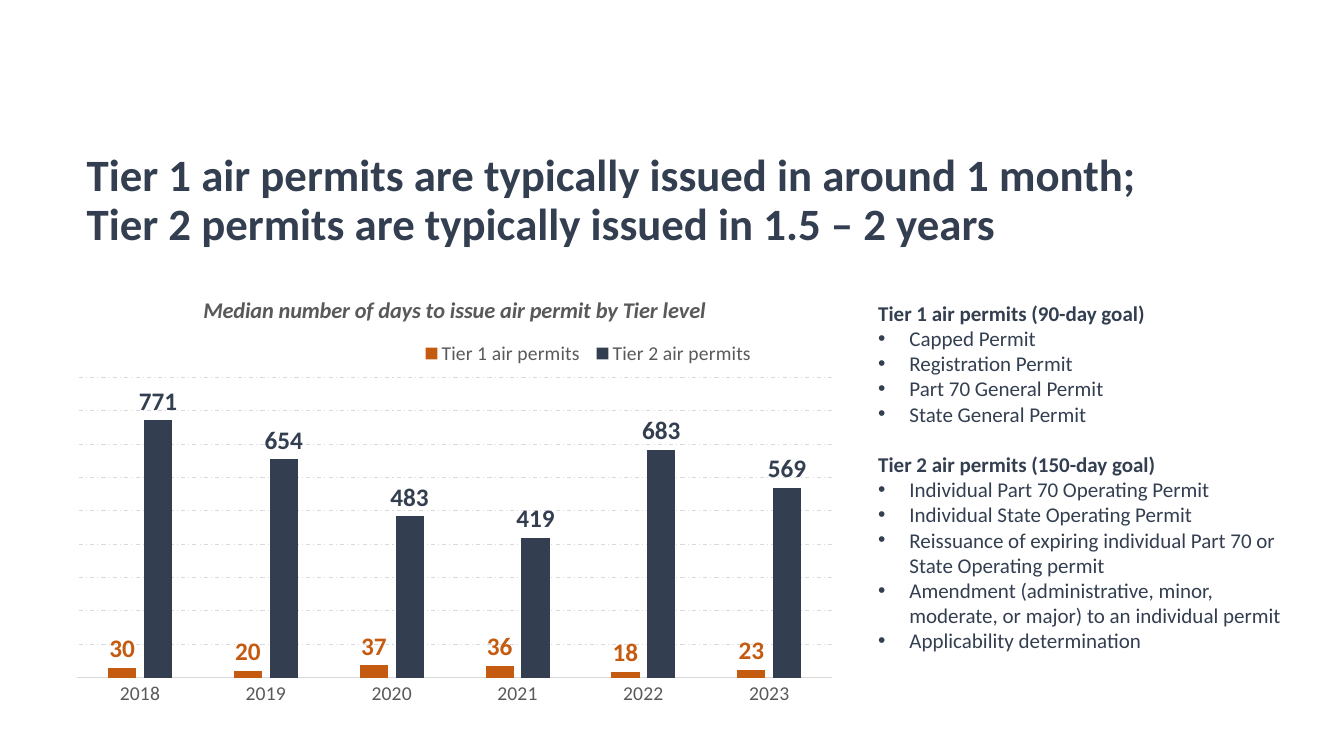
from lxml import etree
from pptx import Presentation
from pptx.chart.data import CategoryChartData
from pptx.dml.color import RGBColor
from pptx.enum.chart import XL_CHART_TYPE as CT, XL_LABEL_POSITION as LP
from pptx.enum.chart import XL_LEGEND_POSITION as LegendPos, XL_TICK_LABEL_POSITION as TickPos, XL_TICK_MARK as Tick
from pptx.enum.dml import MSO_LINE
from pptx.enum.text import MSO_ANCHOR, MSO_AUTO_SIZE, PP_ALIGN
from pptx.oxml import parse_xml
from pptx.oxml.ns import nsdecls, qn
from pptx.util import Inches, Pt

# Content
FONT, NAVY, ORANGE, GRAY, LIGHT = "Calibri", "333F50", "C55A11", "595959", "D9D9D9"
TITLE = ("Tier 1 air permits are typically issued in around 1 month;\v"
         "Tier 2 permits are typically issued in 1.5 – 2 years")
CHART_TITLE = "Median number of days to issue air permit by Tier level"
YEARS = ["2018", "2019", "2020", "2021", "2022", "2023"]
SERIES = [
    ("Tier 1 air permits", [30, 20, 37, 36, 18, 23], ORANGE),
    ("Tier 2 air permits", [771, 654, 483, 419, 683, 569], NAVY),
]
TIERS = [
    ("Tier 1 air permits (90-day goal)", [
        "Capped Permit",
        "Registration Permit",
        "Part 70 General Permit",
        "State General Permit",
    ]),
    ("Tier 2 air permits (150-day goal)", [
        "Individual Part 70 Operating Permit",
        "Individual State Operating Permit",
        "Reissuance of expiring individual Part 70 or State Operating permit",
        "Amendment (administrative, minor, moderate, or major) to an individual permit",
        "Applicability determination",
    ]),
]


def rgb(color):
    return RGBColor.from_string(color)


def set_font(font, size, color, bold=False, italic=False):
    font.name, font.size, font.bold, font.italic = FONT, Pt(size), bold, italic
    font.color.rgb = rgb(color)


def write(tf, text, size, color=NAVY, bold=False, italic=False, bullet=None,
          before=0, line=1.0, align=PP_ALIGN.LEFT):
    """Fill the first paragraph of a frame, or add one after it."""
    p = tf.paragraphs[0]
    if p.text:
        p = tf.add_paragraph()
    indent = Inches(0.31) if bullet else 0
    pPr = p._p.get_or_add_pPr()
    pPr.set("marL", str(indent))
    pPr.set("indent", str(-indent))
    mark = etree.SubElement(pPr, qn("a:buChar" if bullet else "a:buNone"))
    if bullet:
        mark.set("char", bullet)
    p.text = text
    p.alignment, p.line_spacing, p.space_before = align, line, Pt(before)
    p.space_after = Pt(0)
    for r in p.runs:
        set_font(r.font, size, color, bold, italic)


def place(sp, left, top, width, height):
    sp.left, sp.top, sp.width, sp.height = map(Inches, (left, top, width, height))


def set_layout(element, x, y, w=None, h=None, inner=False):
    """Fix a chart part at fractions of the chart area."""
    for old in element.findall(qn("c:layout")):
        element.remove(old)
    parts = [("layoutTarget", "inner")] if inner else []
    parts += [("xMode", "edge"), ("yMode", "edge"), ("x", x), ("y", y)]
    parts += [("w", w), ("h", h)] if w else []
    body = "".join(f'<c:{tag} val="{val}"/>' for tag, val in parts)
    layout = parse_xml(f'<c:layout {nsdecls("c")}><c:manualLayout>{body}'
                       '</c:manualLayout></c:layout>')
    element.insert(0 if inner else 1, layout)


prs = Presentation()
prs.slide_width, prs.slide_height = Inches(13.33), Inches(7.5)
slide = prs.slides.add_slide(prs.slide_layouts[1])

# Title
title = slide.shapes.title
place(title, 0.76, 1.46, 11.45, 1.08)
title.text_frame.vertical_anchor = MSO_ANCHOR.MIDDLE
title.text_frame.auto_size = MSO_AUTO_SIZE.NONE
write(title.text_frame, TITLE, 32, bold=True, line=0.9)

# Permit lists
body = slide.placeholders[1]
place(body, 8.61, 2.93, 4.28, 3.89)
tf = body.text_frame
tf.auto_size = MSO_AUTO_SIZE.NONE
for i, (heading, permits) in enumerate(TIERS):
    write(tf, heading, 15, bold=True, before=18 if i else 0)
    for permit in permits:
        write(tf, permit, 15, bullet="•")

# Chart
data = CategoryChartData()
data.categories = YEARS
for name, days, _ in SERIES:
    data.add_series(name, days)
chart = slide.shapes.add_chart(CT.COLUMN_CLUSTERED, Inches(0.61), Inches(2.75),
                               Inches(7.8), Inches(4.32), data).chart
set_font(chart.font, 14, GRAY)
chart.has_title = True
write(chart.chart_title.text_frame, CHART_TITLE, 16, GRAY, bold=True, italic=True,
      align=PP_ALIGN.CENTER)

# Legend and plot area
chart.has_legend = True
legend = chart.legend
legend.position, legend.include_in_layout = LegendPos.TOP, False
set_font(legend.font, 14, GRAY)
set_layout(legend._element, 0.45, 0.14, 0.44, 0.07)
set_layout(chart._chartSpace.chart.plotArea, 0.02, 0.23, 0.96, 0.69, inner=True)

# Axes
years = chart.category_axis
years.major_tick_mark = Tick.NONE
set_font(years.tick_labels.font, 14, GRAY)
years.format.line.color.rgb = rgb(LIGHT)
years.format.line.width = Pt(0.75)
days_axis = chart.value_axis
days_axis.minimum_scale, days_axis.maximum_scale, days_axis.major_unit = 0, 900, 100
days_axis.tick_label_position = TickPos.NONE
days_axis.visible = False
grid = days_axis.major_gridlines.format.line
grid.color.rgb, grid.width, grid.dash_style = rgb(LIGHT), Pt(0.75), MSO_LINE.DASH_DOT

# Columns and their labels
plot = chart.plots[0]
plot.gap_width, plot.overlap, plot.vary_by_categories = 219, -27, False
for series, (_, _, color) in zip(plot.series, SERIES):
    series.format.fill.solid()
    series.format.fill.fore_color.rgb = rgb(color)
    labels = series.data_labels
    labels.show_value, labels.position = True, LP.OUTSIDE_END
    set_font(labels.font, 18, color, bold=True)

prs.save("out.pptx")
